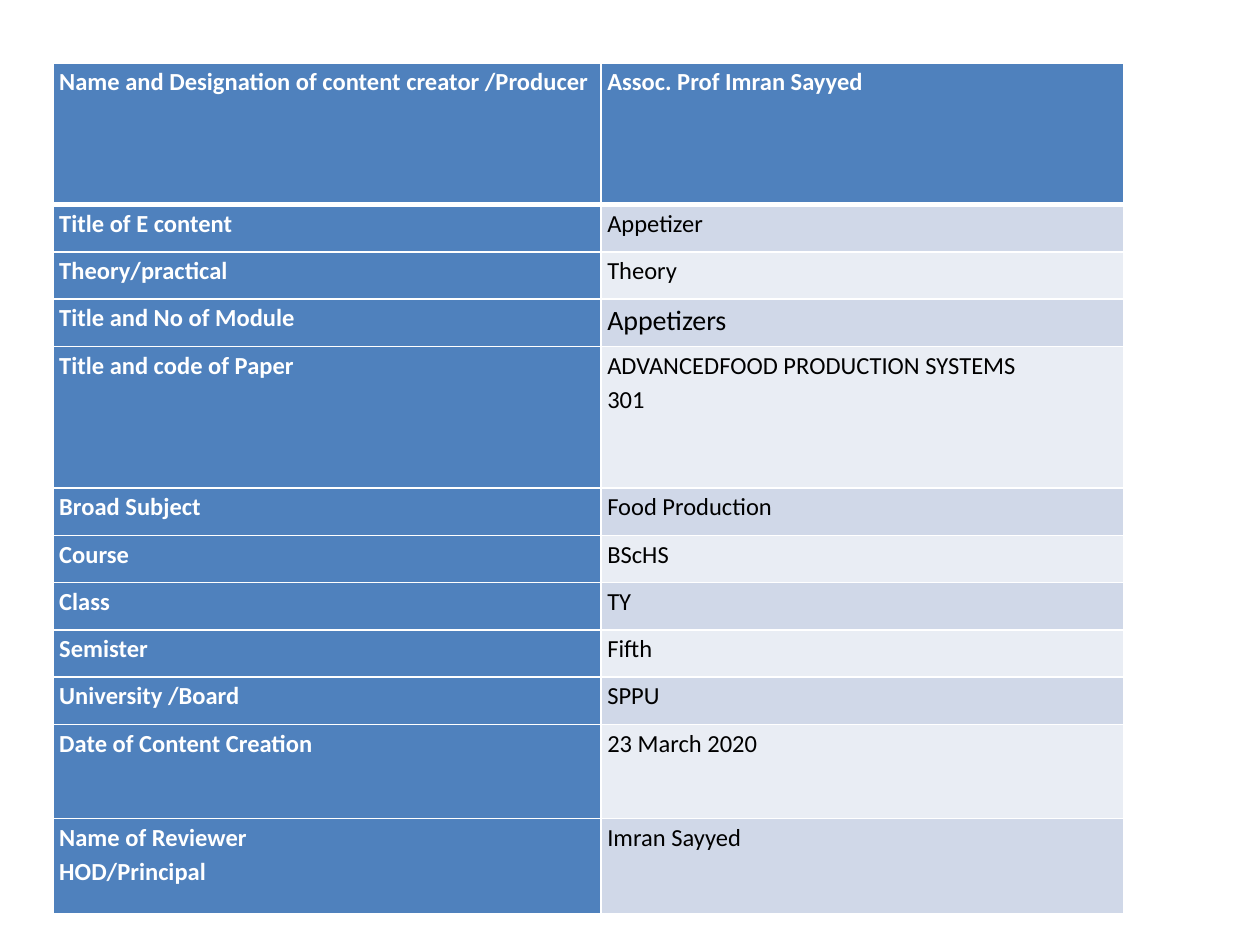
from dataclasses import dataclass

from lxml import etree
from pptx import Presentation
from pptx.dml.color import RGBColor
from pptx.oxml.ns import qn
from pptx.util import Inches, Pt


@dataclass(frozen=True)
class Theme:
    font: str = "Calibri"
    blue: str = "4F81BD"
    band_dark: str = "D0D8E8"
    band_light: str = "E9EDF4"
    white: str = "FFFFFF"
    black: str = "000000"
    body: int = 14
    large: int = 16
    thin: int = 1
    thick: int = 3


theme = Theme()

# Label, value, height in row units
ROWS = [
    ("Name and Designation of content creator /Producer", "Assoc. Prof Imran Sayyed", 3),
    ("Title of E content", "Appetizer", 1),
    ("Theory/practical", "Theory", 1),
    ("Title and No of Module", "Appetizers", 1),
    ("Title and code of Paper", "ADVANCEDFOOD PRODUCTION SYSTEMS\n301", 3),
    ("Broad Subject", "Food Production", 1),
    ("Course", "BScHS", 1),
    ("Class", "TY", 1),
    ("Semister", "Fifth", 1),
    ("University /Board", "SPPU", 1),
    ("Date of Content Creation", "23 March 2020", 2),
    ("Name of Reviewer\nHOD/Principal", "Imran Sayyed", 2),
]
LARGE_VALUES = {"Appetizers"}
COL_WIDTHS = (4.35, 4.15)
TABLE_HEIGHT = 6.75
MARGINS = {
    "margin_left": Inches(0.05),
    "margin_right": Inches(0.05),
    "margin_top": 0,
    "margin_bottom": 0,
}


def set_borders(cell, widths):
    """Draw white cell borders; the lines go before the fill in the cell properties."""
    tc_pr = cell._tc.get_or_add_tcPr()
    for i, (side, width) in enumerate(widths.items()):
        ln = etree.Element(qn(f"a:ln{side}"), w=str(Pt(width)))
        fill = etree.SubElement(ln, qn("a:solidFill"))
        etree.SubElement(fill, qn("a:srgbClr"), val=theme.white)
        tc_pr.insert(i, ln)


prs = Presentation()
prs.slide_width = Inches(10)
prs.slide_height = Inches(7.5)
s = prs.slides.add_slide(prs.slide_layouts[6])

# Table grid
table = s.shapes.add_table(
    len(ROWS), len(COL_WIDTHS),
    Inches(0.42), Inches(0.5), Inches(sum(COL_WIDTHS)), Inches(TABLE_HEIGHT),
).table
table.first_col = True
for column, width in zip(table.columns, COL_WIDTHS):
    column.width = Inches(width)
row_unit = TABLE_HEIGHT / sum(units for _, _, units in ROWS)

# Cells
for r_idx, (label, value, units) in enumerate(ROWS):
    table.rows[r_idx].height = Inches(row_unit * units)
    for c_idx, text in enumerate((label, value)):
        cell = table.cell(r_idx, c_idx)
        heading = r_idx == 0 or c_idx == 0
        band = theme.band_dark if r_idx % 2 else theme.band_light
        for name, margin in MARGINS.items():
            setattr(cell, name, margin)
        cell.fill.solid()
        cell.fill.fore_color.rgb = RGBColor.from_string(theme.blue if heading else band)
        set_borders(cell, {
            "L": theme.thin,
            "R": theme.thin,
            "T": theme.thick if r_idx == 1 else theme.thin,
            "B": theme.thick if r_idx == 0 else theme.thin,
        })

        # Text
        font_format = {
            "name": theme.font,
            "size": Pt(theme.large if text in LARGE_VALUES else theme.body),
            "bold": heading,
        }
        tf = cell.text_frame
        tf.text = text
        for p in tf.paragraphs:
            p.line_spacing = 1.15
            for r in p.runs:
                for name, setting in font_format.items():
                    setattr(r.font, name, setting)
                r.font.color.rgb = RGBColor.from_string(
                    theme.white if heading else theme.black)

prs.save("out.pptx")
